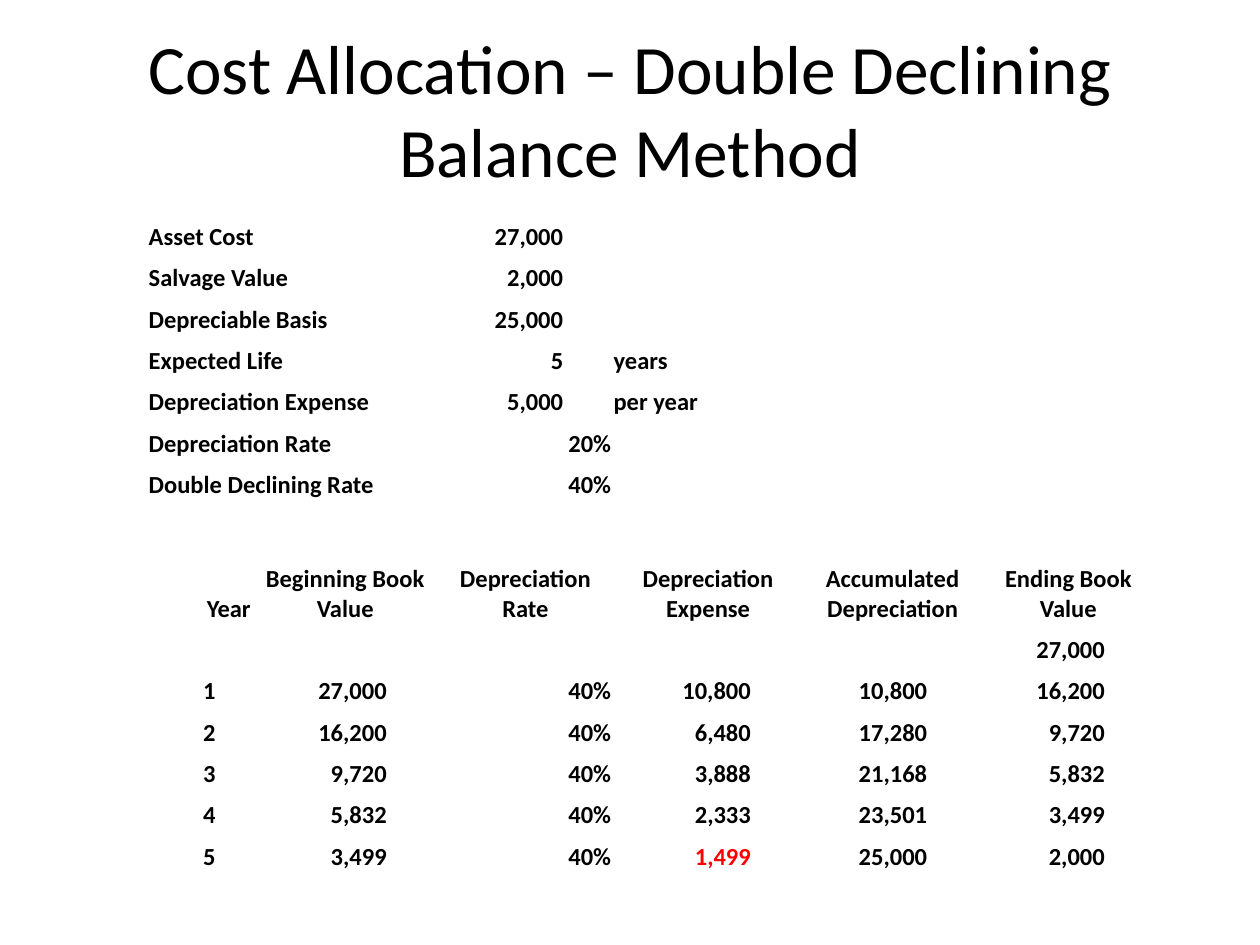
from pptx import Presentation
from pptx.util import Inches, Pt
from pptx.dml.color import RGBColor
from pptx.enum import text

LEFT, CENTER, RIGHT = text.PP_ALIGN.LEFT, text.PP_ALIGN.CENTER, text.PP_ALIGN.RIGHT


def write(tf, words, size, align, color="000000", bold=False):
    p = tf.paragraphs[0]
    p.alignment = align
    r = p.add_run()
    r.text = words
    r.font.name = "Calibri"
    r.font.size = Pt(size)
    r.font.bold = bold
    r.font.color.rgb = RGBColor.from_string(color)


prs = Presentation()
prs.slide_width, prs.slide_height = Inches(10), Inches(7.5)
s = prs.slides.add_slide(prs.slide_layouts[6])

# Title
tf = s.shapes.add_textbox(Inches(0.5), Inches(0.3), Inches(9), Inches(1.12)).text_frame
tf.word_wrap = True
tf.vertical_anchor = text.MSO_ANCHOR.MIDDLE
write(tf, "Cost Allocation – Double Declining Balance Method", 39.6, CENTER)

# Table contents: asset facts, then the yearly schedule
facts = [
    ("Asset Cost", "27,000", ""),
    ("Salvage Value", "2,000", ""),
    ("Depreciable Basis", "25,000", ""),
    ("Expected Life", "5", "years"),
    ("Depreciation Expense", "5,000", "per year"),
    ("Depreciation Rate", "20%", ""),
    ("Double Declining Rate", "40%", ""),
]
header = ["Year", "Beginning Book Value", "Depreciation Rate", "Depreciation Expense",
          "Accumulated Depreciation", "Ending Book Value"]
schedule = [
    ["", "", "", "", "", "27,000"],
    ["1", "27,000", "40%", "10,800", "10,800", "16,200"],
    ["2", "16,200", "40%", "6,480", "17,280", "9,720"],
    ["3", "9,720", "40%", "3,888", "21,168", "5,832"],
    ["4", "5,832", "40%", "2,333", "23,501", "3,499"],
    ["5", "3,499", "40%", "1,499", "25,000", "2,000"],
]
rows = [[label, "", value, unit, "", ""] for label, value, unit in facts] + [header] + schedule
header_row = len(facts)

# Table grid
widths = [0.83, 1.48, 1.38, 1.52, 1.41, 1.38]
number_indents = [0.29, 0.41, 0.39, 0.42, 0.43, 0.4]  # right margin of numbers
header_height, table_height = 0.98, 5.25
row_height = (table_height - header_height) / (len(rows) - 1)

tbl = s.shapes.add_table(len(rows), len(widths), Inches(1.17), Inches(1.67),
                         Inches(sum(widths)), Inches(table_height)).table
tbl.first_row = tbl.horz_banding = False
for col, width in zip(tbl.columns, widths):
    col.width = Inches(width)

# Table cells
for i, row in enumerate(rows):
    tbl.rows[i].height = Inches(header_height if i == header_row else row_height)
    for j, words in enumerate(row):
        cell = tbl.cell(i, j)
        cell.fill.background()
        cell.vertical_anchor = text.MSO_ANCHOR.BOTTOM
        cell.margin_left = cell.margin_right = cell.margin_top = Inches(0.01)
        cell.margin_bottom = 0
        if not words:
            continue
        if i == header_row:
            align = RIGHT if j == 0 else CENTER
        elif words[0].isdigit():
            align = RIGHT
            if not words.endswith("%"):
                cell.margin_right = Inches(number_indents[j])
        else:
            align = LEFT
        color = "FF0000" if words == "1,499" else "000000"
        write(cell.text_frame, words, 14, align, color, bold=True)
    if i < header_row:
        tbl.cell(i, 0).merge(tbl.cell(i, 1))

prs.save("out.pptx")
